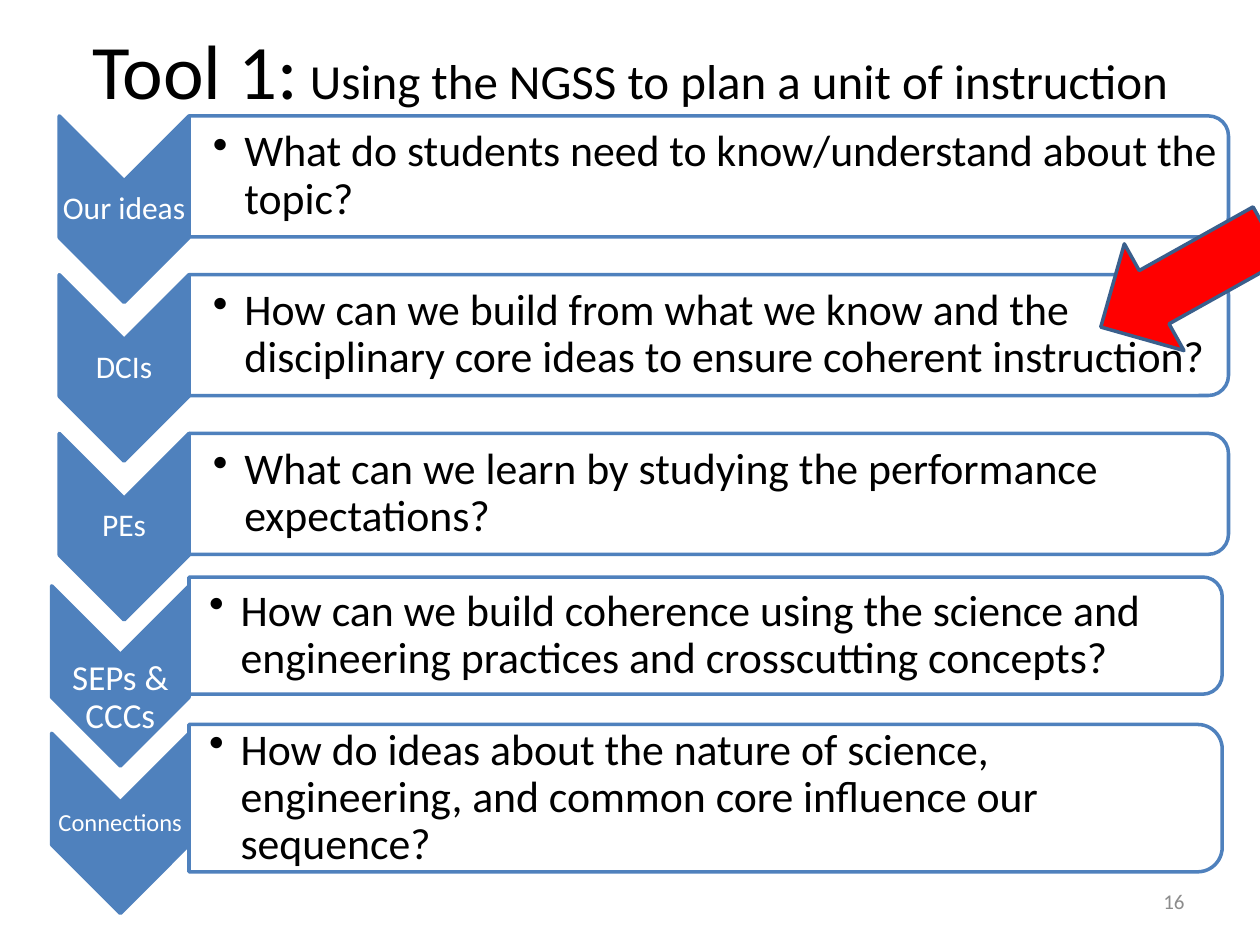
from dataclasses import dataclass

from lxml import etree
from pptx import Presentation
from pptx.dml.color import RGBColor
from pptx.enum.shapes import MSO_SHAPE
from pptx.enum.text import MSO_ANCHOR, PP_ALIGN
from pptx.oxml.ns import qn
from pptx.util import Inches, Pt


@dataclass(frozen=True)
class Theme:
    font: str = "Calibri"
    ink: str = "000000"
    paper: str = "FFFFFF"
    blue: str = "4F81BD"
    arrow_fill: str = "FF0000"
    arrow_line: str = "3A5F8C"
    muted: str = "8C8C8C"
    title_size: int = 44
    subtitle_size: int = 28
    question_size: int = 25
    number_size: int = 12
    outline: int = 2


@dataclass(frozen=True)
class Layout:
    """Shared measures of a group of steps, in inches."""
    chevron_left: float
    chevron_width: float
    chevron_height: float
    panel_width: float
    question_inset: float
    edge_inset: float


@dataclass(frozen=True)
class Step:
    label: str
    label_size: int
    label_drop: float
    question: str
    chevron_top: float
    panel_top: float
    panel_height: float
    layout: Layout


PANEL_LEFT = 1.5
LABEL_HEIGHT = 0.44


class SlideBuilder:
    def __init__(self, slide, theme):
        self.slide = slide
        self.theme = theme

    def shape(self, preset, left, top, width, height, fill, line, rotation=0):
        shape = self.slide.shapes.add_shape(
            preset, Inches(left), Inches(top), Inches(width), Inches(height))
        shape.rotation = rotation
        shape.shadow.inherit = False
        shape.fill.solid()
        shape.fill.fore_color.rgb = RGBColor.from_string(fill)
        shape.line.color.rgb = RGBColor.from_string(line)
        shape.line.width = Pt(self.theme.outline)
        return shape

    def quarter_turned(self, preset, left, top, width, height, fill):
        """Place a shape turned by 90 degrees so that it covers the given area."""
        shift = (width - height) / 2
        return self.shape(preset, left + shift, top - shift, height, width,
                          fill, self.theme.blue, 90)

    def text(self, left, top, width, height, runs, color,
             align=PP_ALIGN.LEFT, insets=(0.1, 0.05, 0.1, 0.05)):
        """Add a text box; runs is a list of (text, size) pairs."""
        box = self.slide.shapes.add_textbox(
            Inches(left), Inches(top), Inches(width), Inches(height))
        frame = box.text_frame
        frame.word_wrap = True
        frame.vertical_anchor = MSO_ANCHOR.MIDDLE
        (frame.margin_left, frame.margin_top,
         frame.margin_right, frame.margin_bottom) = map(Inches, insets)
        paragraph = frame.paragraphs[0]
        paragraph.alignment = align
        paragraph.font.name = self.theme.font
        paragraph.font.color.rgb = RGBColor.from_string(color)
        paragraph.font.size = Pt(runs[0][1])
        for content, size in runs:
            run = paragraph.add_run()
            run.text = content
            if size != runs[0][1]:
                run.font.size = Pt(size)
        return paragraph

    def chevron(self, step):
        area = step.layout
        self.quarter_turned(MSO_SHAPE.CHEVRON, area.chevron_left, step.chevron_top,
                            area.chevron_width, area.chevron_height, self.theme.blue)
        label = self.text(
            area.chevron_left, step.chevron_top + step.label_drop,
            area.chevron_width, LABEL_HEIGHT, [(step.label, step.label_size)],
            self.theme.paper, PP_ALIGN.CENTER, (0.01,) * 4)
        label.line_spacing = 0.9

    def panel(self, step):
        area = step.layout
        panel = self.quarter_turned(
            MSO_SHAPE.ROUND_2_SAME_RECTANGLE, PANEL_LEFT, step.panel_top,
            area.panel_width, step.panel_height, self.theme.paper)
        color = panel.fill._xPr.find(qn("a:solidFill"))[0]
        etree.SubElement(color, qn("a:alpha")).set("val", "90000")
        edge = area.edge_inset
        question = self.text(
            PANEL_LEFT, step.panel_top + 0.05, area.panel_width - 0.05,
            step.panel_height - 0.1, [(step.question, self.theme.question_size)],
            self.theme.ink, insets=(area.question_inset, edge, edge, edge))
        question.line_spacing = 0.9
        self.bullet(question)

    def bullet(self, paragraph):
        properties = paragraph._p.get_or_add_pPr()
        properties.set("marL", str(Inches(0.25)))
        properties.set("indent", str(-Inches(0.25)))
        mark = etree.Element(qn("a:buChar"))
        mark.set("char", "•")
        properties.find(qn("a:defRPr")).addprevious(mark)


UPPER = Layout(0.47, 1.03, 1.48, 8.25, 0.19, 0.02)
LOWER = Layout(0.41, 1.09, 1.43, 8.2, 0.16, 0.01)

UPPER_TOP, UPPER_PITCH = 0.92, 1.26
UPPER_STEPS = [
    ("Our ideas", "What do students need to know/understand about the topic?"),
    ("DCIs", "How can we build from what we know and the disciplinary core "
             "ideas to ensure coherent instruction?"),
    ("PEs", "What can we learn by studying the performance expectations?"),
]
STEPS = [
    Step(label, 18, 0.52, question, top, top, 0.96, UPPER)
    for top, (label, question) in (
        (UPPER_TOP + row * UPPER_PITCH, pair) for row, pair in enumerate(UPPER_STEPS))
] + [
    Step("SEPs & CCCs", 20, 0.67,
         "How can we build coherence using the science and engineering "
         "practices and crosscutting concepts?", 4.65, 4.58, 0.93, LOWER),
    Step("Connections", 14, 0.5,
         "How do ideas about the nature of science, engineering, and common "
         "core influence our sequence?", 5.82, 5.75, 1.17, LOWER),
]


def main():
    theme = Theme()
    deck = Presentation()
    deck.slide_width, deck.slide_height = Inches(10), Inches(7.5)
    builder = SlideBuilder(deck.slides.add_slide(deck.slide_layouts[6]), theme)

    # Title
    builder.text(0.3, -0.08, 9.4, 1.25,
                 [("Tool 1:", theme.title_size),
                  (" Using the NGSS to plan a unit of instruction", theme.subtitle_size)],
                 theme.ink, PP_ALIGN.CENTER)

    # Steps: chevron with label, then panel with question
    for step in STEPS:
        builder.chevron(step)
        builder.panel(step)

    # Arrow pointing at the current step
    builder.shape(MSO_SHAPE.LEFT_ARROW, 8.64, 1.74, 1.52, 0.97,
                  theme.arrow_fill, theme.arrow_line, 330.8)

    # Slide number
    builder.text(7.17, 6.95, 2.33, 0.4, [("16", theme.number_size)],
                 theme.muted, PP_ALIGN.RIGHT)

    deck.save("out.pptx")


if __name__ == "__main__":
    main()
